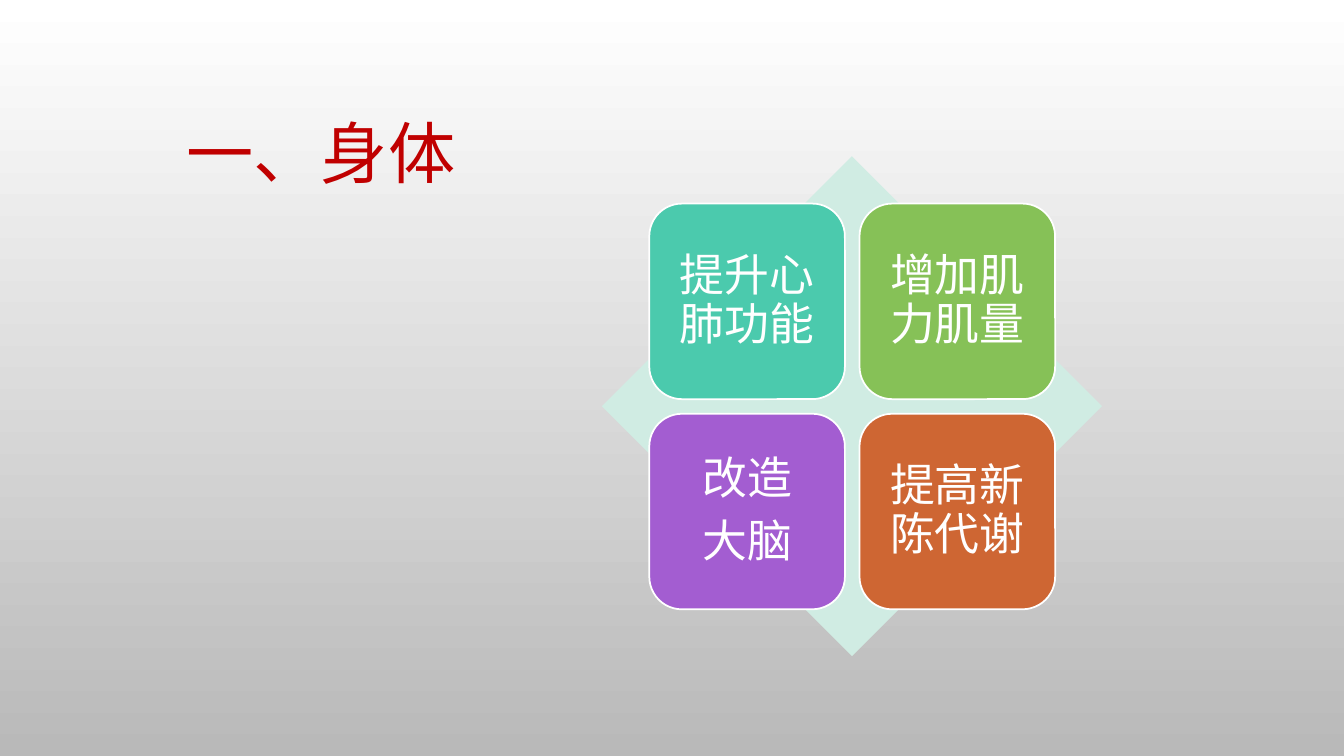
from dataclasses import dataclass

from lxml import etree
from pptx import Presentation
from pptx.dml.color import RGBColor
from pptx.enum import shapes, text
from pptx.oxml import ns
from pptx.util import Inches, Pt


@dataclass(frozen=True)
class Theme:
    font: str = "Noto Sans CJK SC"
    title_size: int = 48
    tile_size: int = 32
    title: str = "C00000"
    white: str = "FFFFFF"
    background_end: str = "B9B9B9"
    diamond: str = "D0ECE3"
    teal: str = "4BCAAD"
    green: str = "86C157"
    purple: str = "A35DD1"
    orange: str = "CE6633"


THEME = Theme()
TILES = [
    (["提升心肺功能"], THEME.teal),
    (["增加肌力肌量"], THEME.green),
    (["改造", "大脑"], THEME.purple),
    (["提高新陈代谢"], THEME.orange),
]
COLUMNS = 2
TILE_LEFT, TILE_TOP = 6.44, 2.02
TILE_SIZE, TILE_PITCH = 1.94, 2.085


def write_text(shape, lines, *, size, color, align, margins, space_after=0):
    """Fill the shape with one paragraph per line; margins are left, top, right, bottom."""
    frame = shape.text_frame
    frame.word_wrap = True
    frame.auto_size = text.MSO_AUTO_SIZE.NONE
    frame.vertical_anchor = text.MSO_ANCHOR.MIDDLE
    (frame.margin_left, frame.margin_top,
     frame.margin_right, frame.margin_bottom) = map(Inches, margins)
    for index, line in enumerate(lines):
        para = frame.paragraphs[0] if index == 0 else frame.add_paragraph()
        para.alignment = align
        para.line_spacing = 0.9
        para.space_before = Pt(0)
        para.space_after = Pt(space_after)
        span = para.add_run()
        span.text = line
        span.font.size = Pt(size)
        span.font.color.rgb = RGBColor.from_string(color)
        span.font.name = THEME.font
        east_asian = etree.SubElement(span.font._element, ns.qn("a:ea"))
        east_asian.set("typeface", THEME.font)


def paint_background(slide):
    fill = slide.background.fill
    fill.gradient()
    fill.gradient_angle = 270
    colors = (THEME.white, THEME.background_end)
    for position, (stop, color) in enumerate(zip(fill.gradient_stops, colors)):
        stop.position = position
        stop.color.rgb = RGBColor.from_string(color)


def add_title(slide, words):
    title = slide.shapes.title
    title.left, title.top = Inches(1), Inches(0.68)
    title.width, title.height = Inches(11.33), Inches(1.75)
    write_text(title, [words], size=THEME.title_size, color=THEME.title,
               align=text.PP_ALIGN.LEFT, margins=(0.85, 0.05, 0.1, 0.05))


def add_block(slide, kind, left, top, size, color):
    """Add a square preset shape with a flat fill and no outline."""
    block = slide.shapes.add_shape(
        kind, Inches(left), Inches(top), Inches(size), Inches(size))
    block.shadow.inherit = False
    block.fill.solid()
    block.fill.fore_color.rgb = RGBColor.from_string(color)
    block.line.fill.background()
    return block


def add_tile(slide, index, lines, color):
    row, column = divmod(index, COLUMNS)
    tile = add_block(slide, shapes.MSO_SHAPE.ROUNDED_RECTANGLE,
                     TILE_LEFT + column * TILE_PITCH,
                     TILE_TOP + row * TILE_PITCH, TILE_SIZE, color)
    tile.line.color.rgb = RGBColor.from_string(THEME.white)
    tile.line.width = Pt(1.25)
    write_text(tile, lines, size=THEME.tile_size, color=THEME.white,
               align=text.PP_ALIGN.CENTER, margins=(0.13,) * 4, space_after=11)


def main():
    deck = Presentation()
    deck.slide_width, deck.slide_height = Inches(13.33), Inches(7.5)
    title_only = deck.slide_layouts.get_by_name("Title Only")
    slide = deck.slides.add_slide(title_only)
    paint_background(slide)
    add_title(slide, "一、身体")
    add_block(slide, shapes.MSO_SHAPE.DIAMOND, 5.97, 1.55, 4.96, THEME.diamond)
    for index, (lines, color) in enumerate(TILES):
        add_tile(slide, index, lines, color)
    deck.save("out.pptx")


if __name__ == "__main__":
    main()
